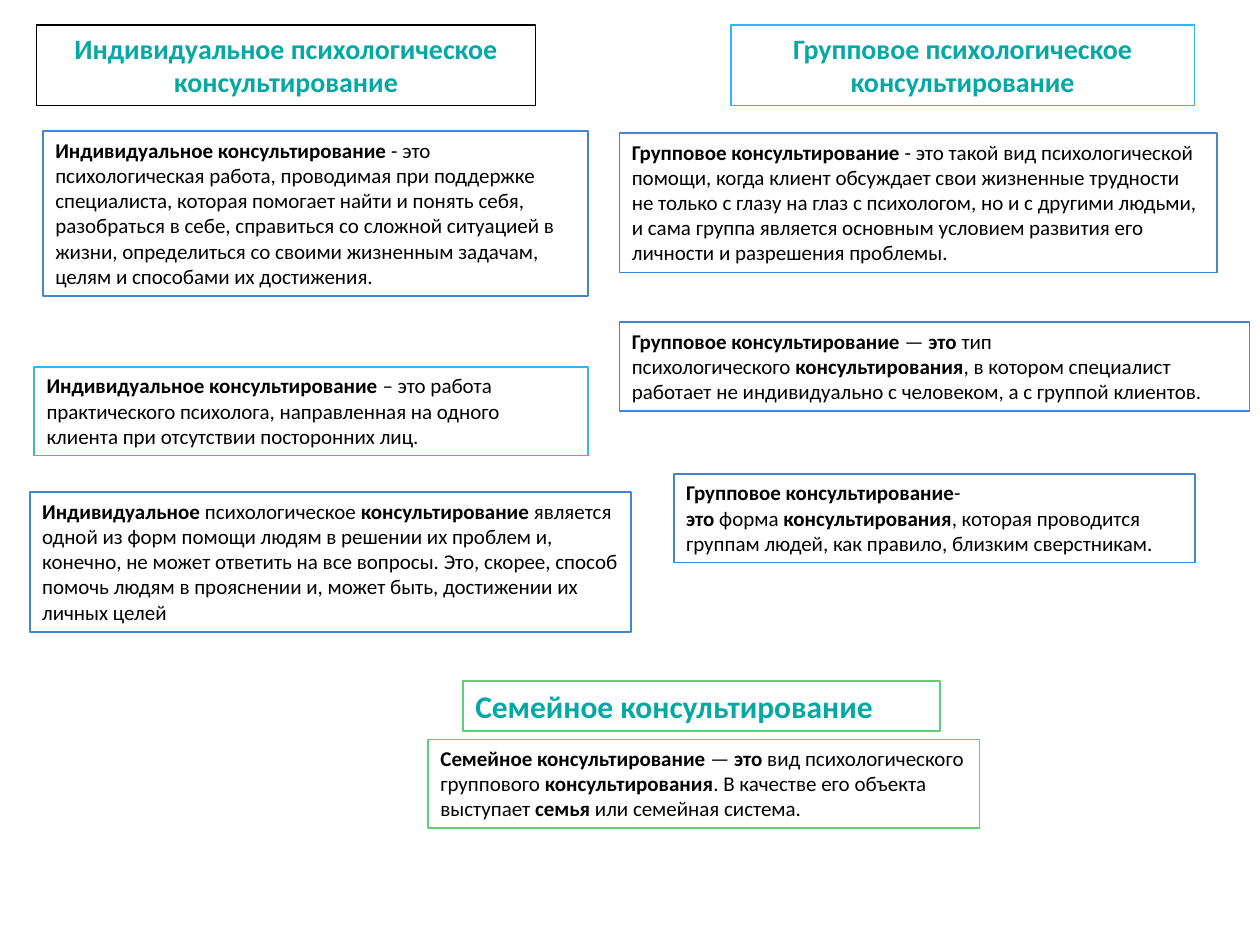
from pptx import Presentation
from pptx import util as u
from pptx.dml.color import RGBColor
from pptx.enum import shapes, text

NBSP = chr(160)
BLACK, TEAL, WHITE = "000000", "04A8A4", "FFFFFF"
SKY, BLUE, GREEN = "31B6FD", "4584D3", "5BD078"


def rgb(value):
    return RGBColor.from_string(value)


class Deck:
    font = "Calibri"
    line_spacing = 1.21
    padding = 7.2

    def __init__(self, prs):
        self.s = prs.slides.add_slide(prs.slide_layouts[6])

    def box(self, left, top, width, lines, size, border):
        """Add a bordered white box tall enough for the given text lines."""
        height = self.padding + lines * size * self.line_spacing
        sp = self.s.shapes.add_shape(
            shapes.MSO_SHAPE.RECTANGLE,
            u.Pt(left), u.Pt(top), u.Pt(width), u.Pt(height))
        sp.shadow.inherit = False
        sp.fill.solid()
        sp.fill.fore_color.rgb = rgb(WHITE)
        sp.line.color.rgb = rgb(border)
        sp.line.width = u.Pt(1)
        tf = sp.text_frame
        tf.word_wrap = True
        tf.auto_size = text.MSO_AUTO_SIZE.SHAPE_TO_FIT_TEXT
        tf.vertical_anchor = text.MSO_ANCHOR.TOP
        return tf.paragraphs[0]

    def style(self, r, size, color, bold):
        r.font.name = self.font
        r.font.size = u.Pt(size)
        r.font.color.rgb = rgb(color)
        r.font.bold = bold

    def heading(self, left, top, width, lines, size, border, align, words):
        p = self.box(left, top, width, lines, size, border)
        p.text = words
        p.alignment = align
        self.style(p.runs[0], size, TEAL, True)

    def definition(self, left, top, width, lines, border, words):
        """Add a definition; * toggles bold and ~ is a no-break space."""
        p = self.box(left, top, width, lines, 12, border)
        p.alignment = text.PP_ALIGN.LEFT
        for i, part in enumerate(words.replace("~", NBSP).split("*")):
            if part:
                r = p.add_run()
                r.text = part
                self.style(r, 12, BLACK, i % 2 == 1)


HEADINGS = [
    (20.9, 14.4, 285.1, 2, 16, BLACK, text.PP_ALIGN.CENTER,
     "Индивидуальное психологическое консультирование"),
    (417.6, 14.4, 265, 2, 16, SKY, text.PP_ALIGN.CENTER,
     "Групповое психологическое консультирование"),
    (264.5, 389, 272.5, 1, 18, GREEN, text.PP_ALIGN.LEFT,
     "Семейное консультирование"),
]

DEFINITIONS = [
    (24.5, 74.9, 311.5, 6, BLUE,
     "*Индивидуальное~консультирование*~- это психологическая работа, "
     "проводимая при поддержке специалиста, которая помогает найти и понять "
     "себя, разобраться в себе, справиться со сложной ситуацией в жизни, "
     "определиться со своими жизненным задачам, целям и способами их "
     "достижения."),
    (19.5, 209.5, 316.5, 3, SKY,
     "*Индивидуальное~консультирование*~– это работа практического психолога, "
     "направленная на одного клиента при отсутствии посторонних лиц."),
    (354, 76, 341.3, 5, BLUE,
     "*Групповое консультирование*~- это такой вид психологической помощи, "
     "когда клиент обсуждает свои жизненные трудности не только с глазу на "
     "глаз с психологом, но и с другими людьми, и сама группа является "
     "основным условием развития его личности и разрешения проблемы."),
    (354, 184, 360, 3, BLUE,
     "*Групповое~консультирование*~—~*это*~тип психологического~"
     "*консультирования*, в котором специалист работает не индивидуально с "
     "человеком, а с группой клиентов."),
    (385, 270.7, 298, 3, BLUE,
     "*Групповое~консультирование*-*это*~форма~*консультирования*, которая "
     "проводится группам людей, как правило, близким сверстникам."),
    (244.6, 422.5, 315.2, 3, GREEN,
     "*Семейное~консультирование*~—~*это*~вид психологического группового~"
     "*консультирования*. В качестве его объекта выступает~*семья *или "
     "семейная система."),
    (17, 281.2, 343.5, 5, BLUE,
     "*Индивидуальное*~психологическое~*консультирование*~является одной из "
     "форм помощи людям в решении их проблем и, конечно, не может ответить на "
     "все вопросы. Это, скорее, способ помочь людям в прояснении и, может "
     "быть, достижении их личных целей"),
]


def main():
    prs = Presentation()
    prs.slide_width, prs.slide_height = u.Pt(720), u.Pt(540)
    deck = Deck(prs)
    for item in HEADINGS:
        deck.heading(*item)
    for item in DEFINITIONS:
        deck.definition(*item)
    prs.save("out.pptx")


if __name__ == "__main__":
    main()
